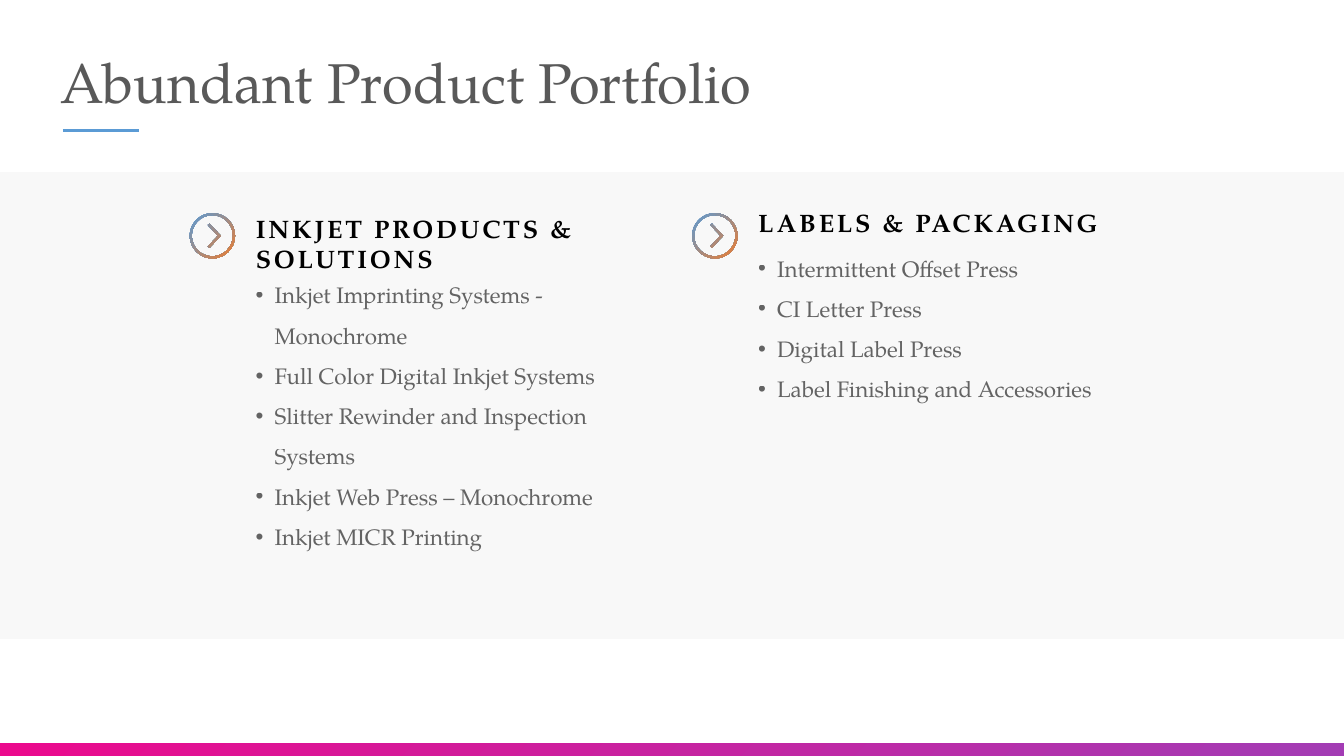
from lxml import etree
from pptx import Presentation
from pptx.dml import color
from pptx.enum import dml, shapes, text
from pptx.oxml import ns
from pptx.util import Pt

FONT = "TeX Gyre Pagella"
ICON_RADIUS = 16.2
ICON_TOP = 152.2
RING_WIDTH = 1.5
CURVE_RATIO = 0.55
CHEVRON = [(-2, -8.6), (6, 0), (-2, 8.6), (-3.2, 7.6), (4, 0), (-3.2, -7.6)]
INDENT = 13.5

COLUMNS = [
    {
        "left": 135.5,
        "heading": "INKJET PRODUCTS & SOLUTIONS",
        "heading_width": 284.4,
        "heading_height": 43.9,
        "heading_spacing": 1.0,
        "list_top": 191.5,
        "list_height": 213,
        "items": [
            "Inkjet Imprinting Systems - Monochrome",
            "Full Color Digital Inkjet Systems",
            "Slitter Rewinder and Inspection Systems",
            "Inkjet Web Press – Monochrome",
            "Inkjet MICR Printing",
        ],
    },
    {
        "left": 494.4,
        "heading": "LABELS & PACKAGING",
        "heading_width": 303,
        "heading_height": 18,
        "heading_spacing": 0.8,
        "list_top": 172.3,
        "list_height": 116.6,
        "items": [
            "Intermittent Offset Press",
            "CI Letter Press",
            "Digital Label Press",
            "Label Finishing and Accessories",
        ],
    },
]


def rgb(value):
    return color.RGBColor.from_string(value)


def fill_gradient(shape, start, end):
    shape.fill.gradient()
    shape.fill.gradient_angle = 315
    for stop, value in zip(shape.fill.gradient_stops, (start, end)):
        stop.color.rgb = rgb(value)


def add_rectangle(slide, left, top, width, height):
    shape = slide.shapes.add_shape(
        shapes.MSO_SHAPE.RECTANGLE, Pt(left), Pt(top), Pt(width), Pt(height)
    )
    shape.shadow.inherit = False
    shape.line.fill.background()
    return shape


def add_text(slide, box, lines, size, value, bold=False, spacing=1.0, margins=(0, 0, 0, 0)):
    shape = slide.shapes.add_textbox(*(Pt(length) for length in box))
    frame = shape.text_frame
    frame.word_wrap = True
    frame.vertical_anchor = text.MSO_ANCHOR.TOP
    frame.margin_left, frame.margin_top, frame.margin_right, frame.margin_bottom = map(Pt, margins)
    frame.text = "\n".join(lines)
    for paragraph in frame.paragraphs:
        paragraph.line_spacing = spacing
        for run in paragraph.runs:
            run.font.name = FONT
            run.font.size = Pt(size)
            run.font.bold = bold
            run.font.color.rgb = rgb(value)
    return frame


def add_bullet_list(slide, box, items):
    frame = add_text(slide, box, items, 16, "000000", spacing=1.5, margins=(0, 0, 7.2, 0))
    for paragraph in frame.paragraphs:
        properties = paragraph._p.get_or_add_pPr()
        properties.set("marL", str(Pt(INDENT)))
        properties.set("indent", str(-Pt(INDENT)))
        etree.SubElement(properties, ns.qn("a:buFont"), typeface="Arial")
        etree.SubElement(properties, ns.qn("a:buChar"), char="•")
        for solid in paragraph._p.iter(ns.qn("a:srgbClr")):
            etree.SubElement(solid, ns.qn("a:alpha"), val="60000")


def circle(radius):
    points = [(0, -radius)]
    handle = radius * CURVE_RATIO
    x, y = 0, -1
    for _ in range(4):
        next_x, next_y = -y, x
        points += [
            (x * radius + next_x * handle, y * radius + next_y * handle),
            (next_x * radius + x * handle, next_y * radius + y * handle),
            (next_x * radius, next_y * radius),
        ]
        x, y = next_x, next_y
    return points


def curve_segments(shape, count):
    segments = list(shape._element.iter(ns.qn("a:lnTo")))[:count]
    for index in range(0, count, 3):
        first, *others = segments[index:index + 3]
        first.tag = ns.qn("a:cubicBezTo")
        for segment in others:
            first.append(segment[0])
            segment.getparent().remove(segment)


def add_chevron_icon(slide, left, top):
    center_x, center_y = left + ICON_RADIUS, top + ICON_RADIUS
    rings = [circle(ICON_RADIUS), circle(ICON_RADIUS - RING_WIDTH)[::-1]]
    builder = None
    for contour in rings + [CHEVRON]:
        points = [(Pt(center_x + x), Pt(center_y + y)) for x, y in contour]
        if builder is None:
            builder = slide.shapes.build_freeform(*points[0])
        else:
            builder.move_to(*points[0])
        builder.add_line_segments(points[1:], close=contour is CHEVRON)
    shape = builder.convert_to_shape()
    curve_segments(shape, sum(len(ring) - 1 for ring in rings))
    shape.shadow.inherit = False
    shape.line.fill.background()
    fill_gradient(shape, "5B9BD5", "ED7D31")


def add_rule(slide, left, right, top):
    connector = slide.shapes.add_connector(
        shapes.MSO_CONNECTOR.STRAIGHT, Pt(left), Pt(top), Pt(right), Pt(top)
    )
    connector.line.color.rgb = rgb("5B9BD5")
    connector.line.width = Pt(2)
    etree.SubElement(connector._element.spPr, ns.qn("a:effectLst"))


def add_column(slide, column):
    left = column["left"]
    text_left = left + 47.2
    heading = add_text(
        slide, (text_left, ICON_TOP, column["heading_width"], column["heading_height"]),
        [column["heading"]], 18, "000000", bold=True, spacing=column["heading_spacing"],
    )
    for run in heading.paragraphs[0].runs:
        run.font._element.set("spc", "200")
    list_box = (text_left, column["list_top"], 269.3, column["list_height"])
    add_bullet_list(slide, list_box, column["items"])
    add_chevron_icon(slide, left, ICON_TOP)


def main():
    presentation = Presentation()
    presentation.slide_width = Pt(960)
    presentation.slide_height = Pt(540)
    slide = presentation.slides.add_slide(presentation.slide_layouts[6])

    footer = add_rectangle(slide, 0, 530.8, 960, 9.2)
    fill_gradient(footer, "EB0A8D", "A33CB4")

    panel = add_rectangle(slide, 0, 122.5, 960, 333)
    panel.fill.patterned()
    panel.fill.pattern = dml.MSO_PATTERN.DARK_HORIZONTAL
    panel.fill.fore_color.rgb = rgb("F8F8F8")
    panel.fill.back_color.rgb = rgb("FFFFFF")

    add_text(
        slide, (36, 36, 535, 58.3), ["Abundant Product Portfolio"],
        40, "595959", spacing=0.9, margins=(7.2, 3.6, 7.2, 3.6),
    )

    for column in COLUMNS:
        add_column(slide, column)

    add_rule(slide, 45, 99, 93)

    presentation.save("out.pptx")


if __name__ == "__main__":
    main()
